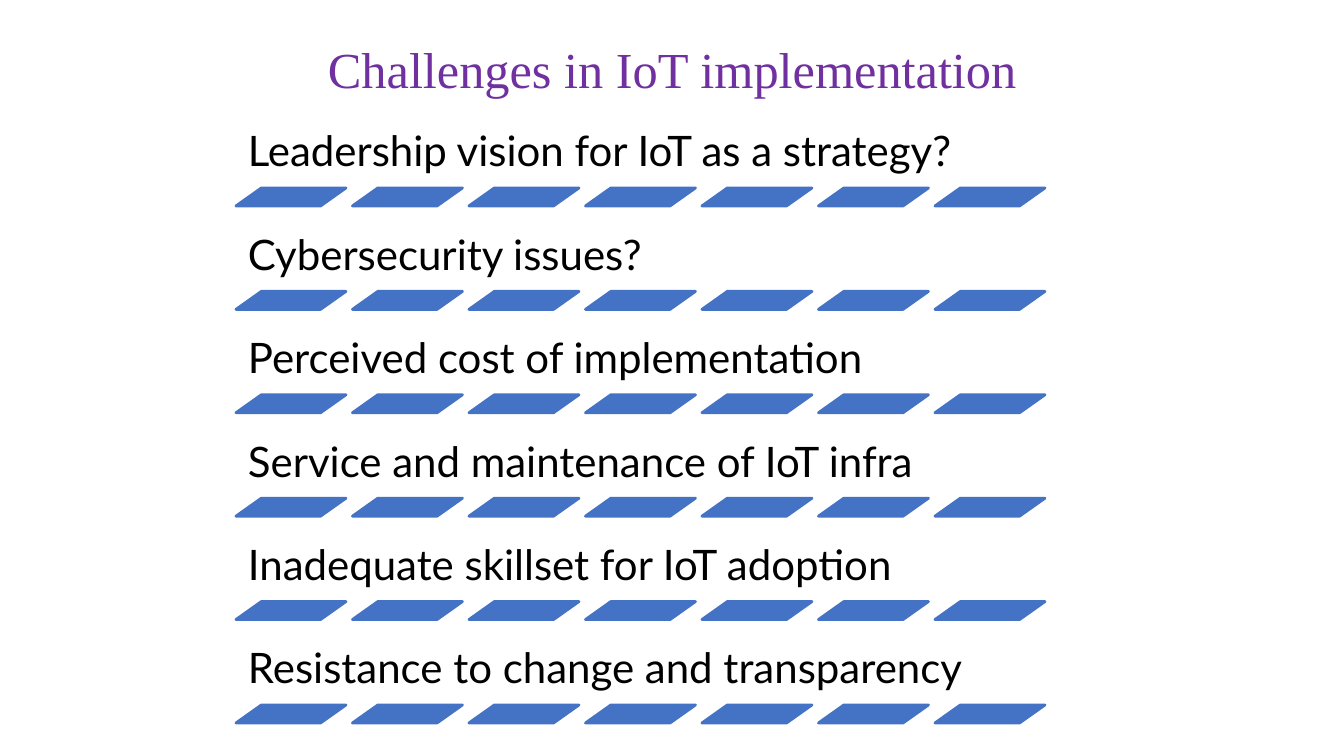
import pptx
import pptx.dml.color
import pptx.enum.shapes
import pptx.enum.text
import pptx.util

TITLE = "Challenges in IoT implementation"
CHALLENGES = [
    "Leadership vision for IoT as a strategy?",
    "Cybersecurity issues?",
    "Perceived cost of implementation",
    "Service and maintenance of IoT infra",
    "Inadequate skillset for IoT adoption",
    "Resistance to change and transparency",
]

THEME = {
    "title": {"font": "Times New Roman", "size": 36, "color": "7030A0"},
    "challenge": {"font": "Lato", "size": 30, "color": "000000"},
    "bar": "4472C4",
    "bar_line": 2,
    "line_spacing": 0.9,
}

SLIDE_SIZE = (1344, 756)
TITLE_BOX = (93, 32, 1159, 80)
LIST_LEFT, LIST_TOP = 236, 113
LABEL_WIDTH, LABEL_HEIGHT = 826, 75
ROW_SPAN = 517
BAR_COUNT, BAR_SPAN = 7, 699
BAR_WIDTH, BAR_HEIGHT = 110, 18
BAR_SLANT = 1.41


def px(length):
    return pptx.util.Emu(round(length * 914400 / 100.8))


def rgb(value):
    return pptx.dml.color.RGBColor.from_string(value)


def add_text(shapes, text, box, style, anchor, alignment, insets):
    shape = shapes.add_textbox(*map(px, box))
    frame = shape.text_frame
    frame.text = text
    frame.word_wrap = True
    frame.vertical_anchor = anchor
    frame.margin_left = frame.margin_right = px(insets[0])
    frame.margin_top = frame.margin_bottom = px(insets[1])
    paragraph = frame.paragraphs[0]
    paragraph.alignment = alignment
    paragraph.line_spacing = THEME["line_spacing"]
    font = paragraph.runs[0].font
    font.name = style["font"]
    font.size = pptx.util.Pt(style["size"])
    font.color.rgb = rgb(style["color"])


def add_bar(shapes, left, top):
    shape = shapes.add_shape(
        pptx.enum.shapes.MSO_SHAPE.PARALLELOGRAM,
        px(left), px(top), px(BAR_WIDTH), px(BAR_HEIGHT),
    )
    shape.adjustments[0] = BAR_SLANT
    shape.shadow.inherit = False
    shape.fill.solid()
    shape.fill.fore_color.rgb = rgb(THEME["bar"])
    shape.line.color.rgb = rgb(THEME["bar"])
    shape.line.width = pptx.util.Pt(THEME["bar_line"])


def main():
    anchors = pptx.enum.text.MSO_ANCHOR
    alignments = pptx.enum.text.PP_ALIGN
    presentation = pptx.Presentation()
    presentation.slide_width, presentation.slide_height = map(px, SLIDE_SIZE)
    slide = presentation.slides.add_slide(presentation.slide_layouts[6])

    add_text(slide.shapes, TITLE, TITLE_BOX, THEME["title"],
             anchors.MIDDLE, alignments.CENTER, (10, 5))

    challenge_list = slide.shapes.add_group_shape()
    row_pitch = ROW_SPAN / (len(CHALLENGES) - 1)
    bar_pitch = BAR_SPAN / (BAR_COUNT - 1)
    for row, challenge in enumerate(CHALLENGES):
        top = LIST_TOP + row * row_pitch
        label_box = (LIST_LEFT, top, LABEL_WIDTH, LABEL_HEIGHT)
        add_text(challenge_list.shapes, challenge, label_box, THEME["challenge"],
                 anchors.BOTTOM, alignments.LEFT, (12, 12))
        for column in range(BAR_COUNT):
            add_bar(challenge_list.shapes, LIST_LEFT + column * bar_pitch,
                    top + LABEL_HEIGHT)

    presentation.save("out.pptx")


if __name__ == "__main__":
    main()
